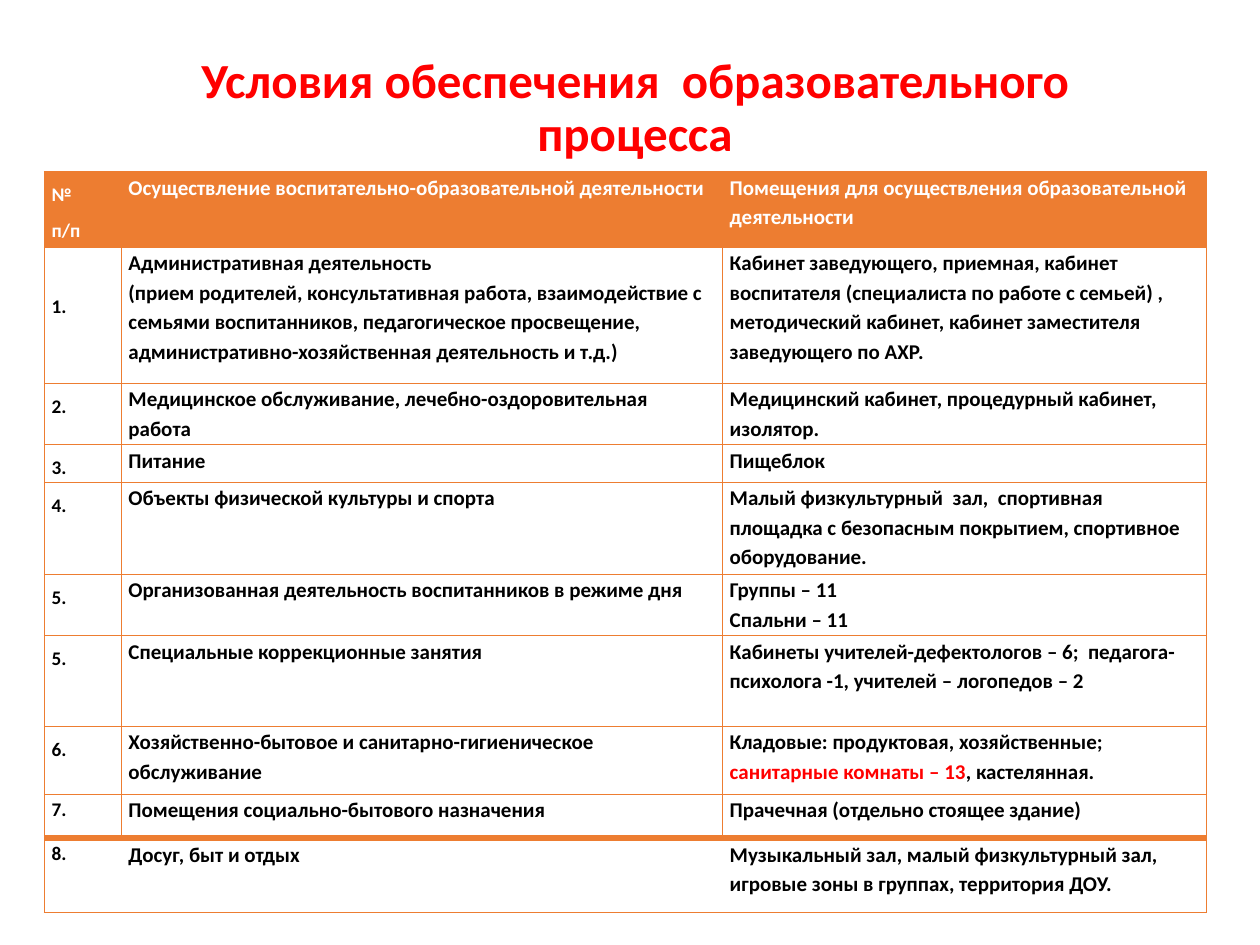
from lxml import etree
from pptx import Presentation
from pptx.dml.color import RGBColor
from pptx.enum import text
from pptx.oxml import ns
from pptx.util import Cm, Pt

RED = RGBColor(0xFF, 0x00, 0x00)
ORANGE = RGBColor(0xED, 0x7D, 0x31)
WHITE = RGBColor(0xFF, 0xFF, 0xFF)
BLACK = RGBColor(0x00, 0x00, 0x00)
FONT = "Calibri"

COLUMN_WIDTHS = [1.55, 12.12, 9.75]
ROW_HEIGHTS = [1.52, 2.74, 1.24, 0.76, 1.85, 1.24, 1.83, 1.37, 0.89, 1.5]

# Each cell lists its paragraphs; a paragraph is a string or a list of (words, colour) runs.
ROWS = [
    [["№", "п/п"],
     ["Осуществление воспитательно-образовательной деятельности"],
     ["Помещения для осуществления образовательной деятельности"]],
    [["1."],
     ["Административная деятельность",
      "(прием родителей, консультативная работа, взаимодействие с семьями воспитанников, "
      "педагогическое просвещение, административно-хозяйственная деятельность и т.д.)"],
     ["Кабинет заведующего, приемная, кабинет воспитателя (специалиста по работе с семьей) , "
      "методический кабинет, кабинет заместителя заведующего по АХР."]],
    [["2."],
     ["Медицинское обслуживание, лечебно-оздоровительная работа"],
     ["Медицинский кабинет, процедурный кабинет, изолятор."]],
    [["3."], ["Питание"], ["Пищеблок"]],
    [["4."],
     ["Объекты физической культуры и спорта"],
     ["Малый физкультурный  зал,  спортивная площадка с безопасным покрытием, "
      "спортивное  оборудование."]],
    [["5."],
     ["Организованная деятельность воспитанников в режиме дня"],
     ["Группы – 11", "Спальни – 11"]],
    [["5."],
     ["Специальные коррекционные занятия"],
     ["Кабинеты учителей-дефектологов – 6;  педагога-психолога -1, учителей – логопедов – 2"]],
    [["6."],
     ["Хозяйственно-бытовое и санитарно-гигиеническое обслуживание"],
     [[("Кладовые: продуктовая, хозяйственные; ", BLACK),
       ("санитарные комнаты – 13", RED),
       (", кастелянная.", BLACK)]]],
    [["7."],
     ["Помещения социально-бытового назначения"],
     ["Прачечная (отдельно стоящее здание)"]],
    [["8."],
     ["Досуг, быт и отдых"],
     ["Музыкальный зал, малый физкультурный зал, игровые зоны в группах, территория ДОУ."]],
]
LAST_ROW = len(ROWS) - 1
LAST_COLUMN = len(COLUMN_WIDTHS) - 1


def add_run(paragraph, words, size, color):
    run = paragraph.add_run()
    run.text = words
    run.font.name = FONT
    run.font.size = Pt(size)
    run.font.bold = True
    run.font.color.rgb = color


def set_border(cell, side, width):
    """Draw one side (L, R, T or B) in orange; a width of 0 hides it."""
    properties = cell._tc.get_or_add_tcPr()
    line = etree.SubElement(properties, ns.qn(f"a:ln{side}"), w=str(Pt(width)))
    if width:
        fill = etree.SubElement(line, ns.qn("a:solidFill"))
        etree.SubElement(fill, ns.qn("a:srgbClr"), val=str(ORANGE))
    else:
        etree.SubElement(line, ns.qn("a:noFill"))


presentation = Presentation()
presentation.slide_width = Cm(25.4)
presentation.slide_height = Cm(19.05)
slide = presentation.slides.add_slide(presentation.slide_layouts[5])

title = slide.shapes.title
title.left, title.top, title.width, title.height = Cm(1.85), Cm(0.36), Cm(21.9), Cm(3.68)
title.text_frame.auto_size = text.MSO_AUTO_SIZE.NONE
title.text_frame.vertical_anchor = text.MSO_ANCHOR.MIDDLE
heading = title.text_frame.paragraphs[0]
heading.alignment = text.PP_ALIGN.CENTER
heading.line_spacing = 0.9
add_run(heading, "Условия обеспечения  образовательного процесса", 28, RED)

table = slide.shapes.add_table(
    len(ROWS), len(COLUMN_WIDTHS), Cm(0.89), Cm(3.46),
    Cm(sum(COLUMN_WIDTHS)), Cm(sum(ROW_HEIGHTS))).table
table.horz_banding = False
for column, width in zip(table.columns, COLUMN_WIDTHS):
    column.width = Cm(width)
for row, height in zip(table.rows, ROW_HEIGHTS):
    row.height = Cm(height)

for row_index, row in enumerate(ROWS):
    for column_index, paragraphs in enumerate(row):
        is_header = row_index == 0
        is_total = row_index == LAST_ROW
        is_number = column_index == 0
        cell = table.cell(row_index, column_index)
        cell.margin_left = cell.margin_right = Cm(0.15)
        cell.margin_top = Cm(0.72) if is_number and row_index == 1 else 0
        cell.margin_bottom = 0

        # The last row is one open band under a heavy rule.
        set_border(cell, "L", 0 if is_total and column_index > 0 else 0.5)
        set_border(cell, "R", 0 if is_total and column_index < LAST_COLUMN else 0.5)
        set_border(cell, "T", 4 if is_total else 0.5)
        set_border(cell, "B", 4 if row_index == LAST_ROW - 1 else 0.5)
        cell.fill.solid()
        cell.fill.fore_color.rgb = ORANGE if is_header else WHITE

        color = WHITE if is_header else BLACK
        for index, content in enumerate(paragraphs):
            frame = cell.text_frame
            paragraph = frame.paragraphs[0] if index == 0 else frame.add_paragraph()
            paragraph.line_spacing = 1.5 if is_number and row_index < 8 else 1.15
            runs = [(content, color)] if isinstance(content, str) else content
            for words, run_color in runs:
                add_run(paragraph, words, 11 if is_number else 12, run_color)

presentation.save("out.pptx")
